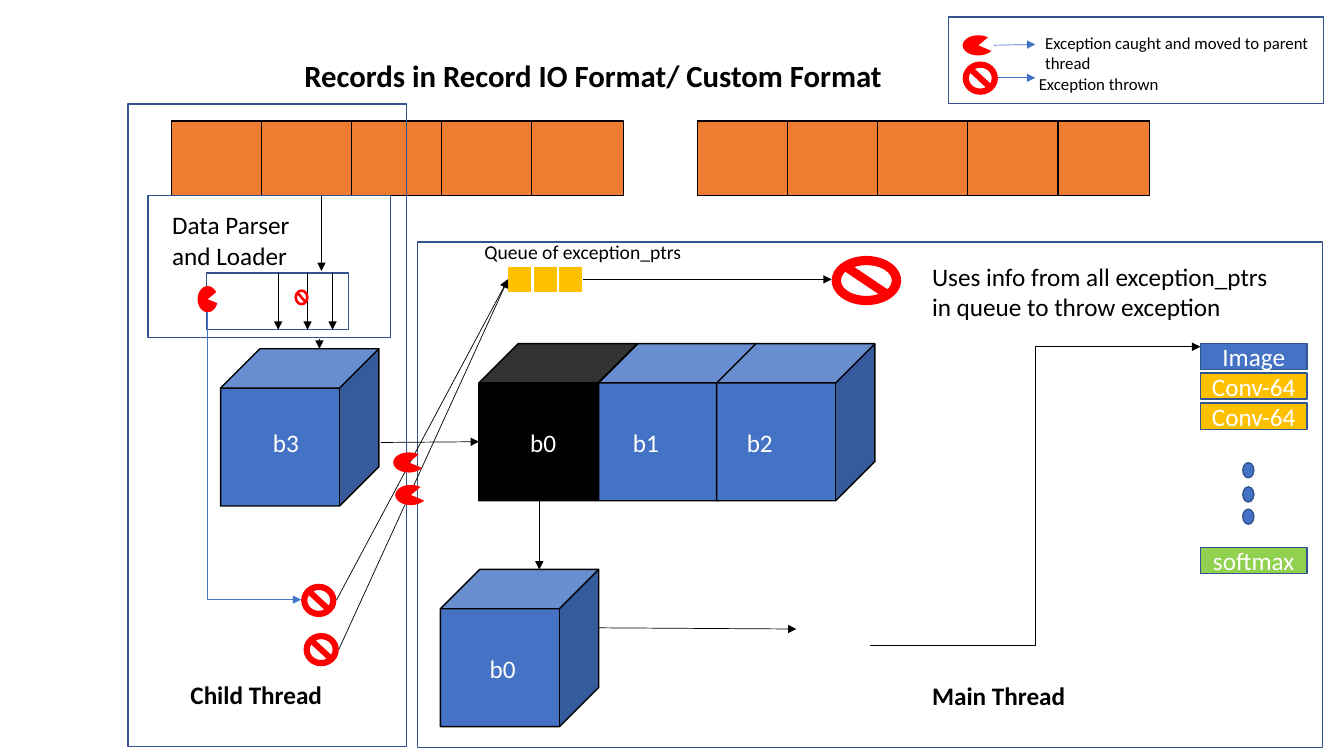
from lxml import etree
from pptx import Presentation
from pptx import util as u
from pptx.dml.color import RGBColor
from pptx.enum import shapes, text
from pptx.oxml.ns import qn

SHAPE = shapes.MSO_SHAPE
BLACK, WHITE, BLUE, NAVY = "000000", "FFFFFF", "4472C4", "325491"
ORANGE, GOLD, GREEN, RED = "ED7D31", "FFC000", "92D050", "FF0000"


def color(hex_value):
    return RGBColor.from_string(hex_value)


class Diagram:
    font = "Calibri"
    outline = u.Pt(1)
    arrow_width = u.Pt(0.5)

    def __init__(self, slide):
        self.slide = slide

    def style(self, paragraph, size, ink, bold=False):
        paragraph.font.name = self.font
        paragraph.font.size = u.Pt(size)
        paragraph.font.bold = bold
        paragraph.font.color.rgb = color(ink)

    def shape(self, kind, left, top, width, height, fill=None, line=None):
        shape = self.slide.shapes.add_shape(
            kind, u.Cm(left), u.Cm(top), u.Cm(width), u.Cm(height))
        shape.shadow.inherit = False
        if fill:
            shape.fill.solid()
            shape.fill.fore_color.rgb = color(fill)
        else:
            shape.fill.background()
        if line:
            shape.line.color.rgb = color(line)
            shape.line.width = self.outline
        else:
            shape.line.fill.background()
        return shape

    def label(self, words, left, top, width, height, size=18, ink=BLACK, bold=False):
        box = self.slide.shapes.add_textbox(
            u.Cm(left), u.Cm(top), u.Cm(width), u.Cm(height))
        frame = box.text_frame
        frame.word_wrap = True
        frame.auto_size = text.MSO_AUTO_SIZE.SHAPE_TO_FIT_TEXT
        frame.text = words
        self.style(frame.paragraphs[0], size, ink, bold)

    def arrow(self, x1, y1, x2, y2, ink=BLACK, kind=shapes.MSO_CONNECTOR.STRAIGHT):
        connector = self.slide.shapes.add_connector(
            kind, u.Cm(x1), u.Cm(y1), u.Cm(x2), u.Cm(y2))
        connector.line.color.rgb = color(ink)
        connector.line.width = self.arrow_width
        line = connector.line._get_or_add_ln()
        etree.SubElement(line, qn("a:tailEnd"), type="triangle")
        etree.SubElement(connector._element.spPr, qn("a:effectLst"))
        return connector

    def down_then_right(self, x1, y1, x2, y2, ink):
        """Draw a one-corner arrow: a flipped elbow turned by 270 degrees."""
        middle_x, middle_y = (x1 + x2) / 2, (y1 + y2) / 2
        half_width, half_height = (y2 - y1) / 2, (x2 - x1) / 2
        connector = self.arrow(
            middle_x + half_width, middle_y - half_height,
            middle_x - half_width, middle_y + half_height,
            ink, shapes.MSO_CONNECTOR.ELBOW)
        properties = connector._element.spPr
        properties.find(qn("a:xfrm")).set("rot", "16200000")
        properties.find(qn("a:prstGeom")).set("prst", "bentConnector2")

    def cube(self, name, left, top, label_dx, label_dy=1.98, fill=BLUE):
        self.shape(SHAPE.CUBE, left, top, 3.99, 3.96, fill, BLACK)
        self.label(name, left + label_dx, top + label_dy, 1.45, 1.02, ink=WHITE)

    def layer(self, name, top, fill):
        """Draw one named layer of the neural network."""
        shape = self.shape(SHAPE.RECTANGLE, 30.25, top, 2.69, 0.66, fill, NAVY)
        frame = shape.text_frame
        frame.text = name
        frame.vertical_anchor = text.MSO_ANCHOR.MIDDLE
        paragraph = frame.paragraphs[0]
        paragraph.alignment = text.PP_ALIGN.CENTER
        self.style(paragraph, 18, WHITE)

    def thrown(self, left, top, width=0.89, height=0.84):
        self.shape(SHAPE.NO_SYMBOL, left, top, width, height, RED)

    def caught(self, left, top, width=0.79, height=0.51):
        pie = self.shape(SHAPE.PIE, left, top, width, height, RED)
        pie.adjustments[0] = 13.526
        pie.adjustments[1] = 192.286


def draw_records(diagram):
    for start in (4.32, 17.58):
        for index in range(5):
            diagram.shape(SHAPE.RECTANGLE, start + 2.27 * index, 3.05,
                          2.31, 1.88, ORANGE, BLACK)
    diagram.label("Records in Record IO Format/ Custom Format",
                  7.42, 1.3, 17.7, 1.19, 22, bold=True)


def draw_legend(diagram):
    diagram.shape(SHAPE.FLOWCHART_PROCESS, 23.9, 0.43, 9.45, 2.18, line=NAVY)
    diagram.caught(24.26, 0.89)
    diagram.arrow(25.04, 1.14, 26.09, 1.12, BLUE)
    diagram.label("Exception caught and moved to parent thread", 26.09, 0.69, 7.24, 1.27, 12)
    diagram.thrown(24.26, 1.55)
    diagram.arrow(25.15, 1.96, 26.09, 1.96, BLUE)
    diagram.label("Exception thrown", 25.93, 1.73, 5.38, 0.76, 12)


def draw_child_thread(diagram):
    diagram.shape(SHAPE.RECTANGLE, 3.23, 2.62, 7.01, 16.2, line=NAVY)
    diagram.label("Child Thread", 4.55, 16.99, 7.52, 1.02, bold=True)
    diagram.shape(SHAPE.RECTANGLE, 3.73, 4.93, 6.12, 3.58, line=NAVY)
    diagram.label("Data Parser and Loader", 4.09, 5.16, 3.66, 1.8)
    diagram.shape(SHAPE.FLOWCHART_PROCESS, 5.21, 6.88, 3.58, 1.42, line=NAVY)
    diagram.arrow(8.1, 4.93, 8.1, 6.83)
    for x in (7.01, 7.75, 8.38):
        diagram.arrow(x, 6.88, x, 8.31)
    diagram.cube("b3", 5.56, 8.79, 1.07, 1.85)
    diagram.arrow(8.05, 8.53, 8.05, 8.79)
    diagram.thrown(7.42, 7.29, 0.36, 0.41)
    diagram.caught(4.98, 7.21, 0.51, 0.66)
    diagram.down_then_right(5.23, 7.87, 7.59, 15.11, BLUE)


def draw_main_thread(diagram):
    diagram.shape(SHAPE.FLOWCHART_PROCESS, 10.52, 6.1, 22.81, 12.73, line=NAVY)
    diagram.label("Main Thread", 23.24, 17.02, 7.52, 1.02, bold=True)
    diagram.cube("b0", 12.07, 8.66, 1.04, fill=BLACK)
    diagram.cube("b1", 15.09, 8.66, 0.61)
    diagram.cube("b2", 18.06, 8.66, 0.51)
    diagram.cube("b0", 11.1, 14.35, 0.99)
    diagram.arrow(9.6, 11.15, 12.07, 11.13)
    diagram.arrow(13.59, 12.6, 13.59, 14.35)
    diagram.arrow(15.09, 15.82, 20.07, 15.85)
    diagram.arrow(21.92, 16.26, 30.25, 8.74, kind=shapes.MSO_CONNECTOR.ELBOW)
    for name, top, fill in (("Image", 8.66, BLUE), ("Conv-64", 9.4, GOLD),
                            ("Conv-64", 10.16, GOLD), ("softmax", 13.79, GREEN)):
        diagram.layer(name, top, fill)
    for top in (11.66, 12.27, 12.83):
        diagram.shape(SHAPE.FLOWCHART_CONNECTOR, 31.32, top, 0.28, 0.38, BLUE, NAVY)


def draw_exception_queue(diagram):
    for index in range(3):
        diagram.shape(SHAPE.FLOWCHART_PROCESS, 12.8 + 0.65 * index, 6.73, 0.58, 0.64, GOLD)
    diagram.label("Queue of exception_ptrs", 11.96, 5.92, 7.24, 0.86, 14)
    diagram.arrow(14.68, 7.04, 20.96, 7.04)
    diagram.thrown(20.96, 6.45, 1.75, 1.24)
    diagram.label("Uses info from all exception_ptrs in queue to throw exception",
                  23.24, 6.45, 9.3, 1.8)
    for left, top in ((7.59, 14.71), (7.65, 15.95)):
        diagram.thrown(left, top)
        diagram.arrow(left + 0.89, top + 0.41, 12.8, 7.04)
    diagram.caught(9.91, 11.4)
    diagram.caught(9.96, 12.22)


def main():
    presentation = Presentation()
    presentation.slide_width = u.Cm(33.87)
    presentation.slide_height = u.Cm(19.05)
    slide = presentation.slides.add_slide(presentation.slide_layouts[6])
    diagram = Diagram(slide)
    draw_records(diagram)
    draw_main_thread(diagram)
    draw_child_thread(diagram)
    draw_legend(diagram)
    draw_exception_queue(diagram)
    presentation.save("out.pptx")


if __name__ == "__main__":
    main()
